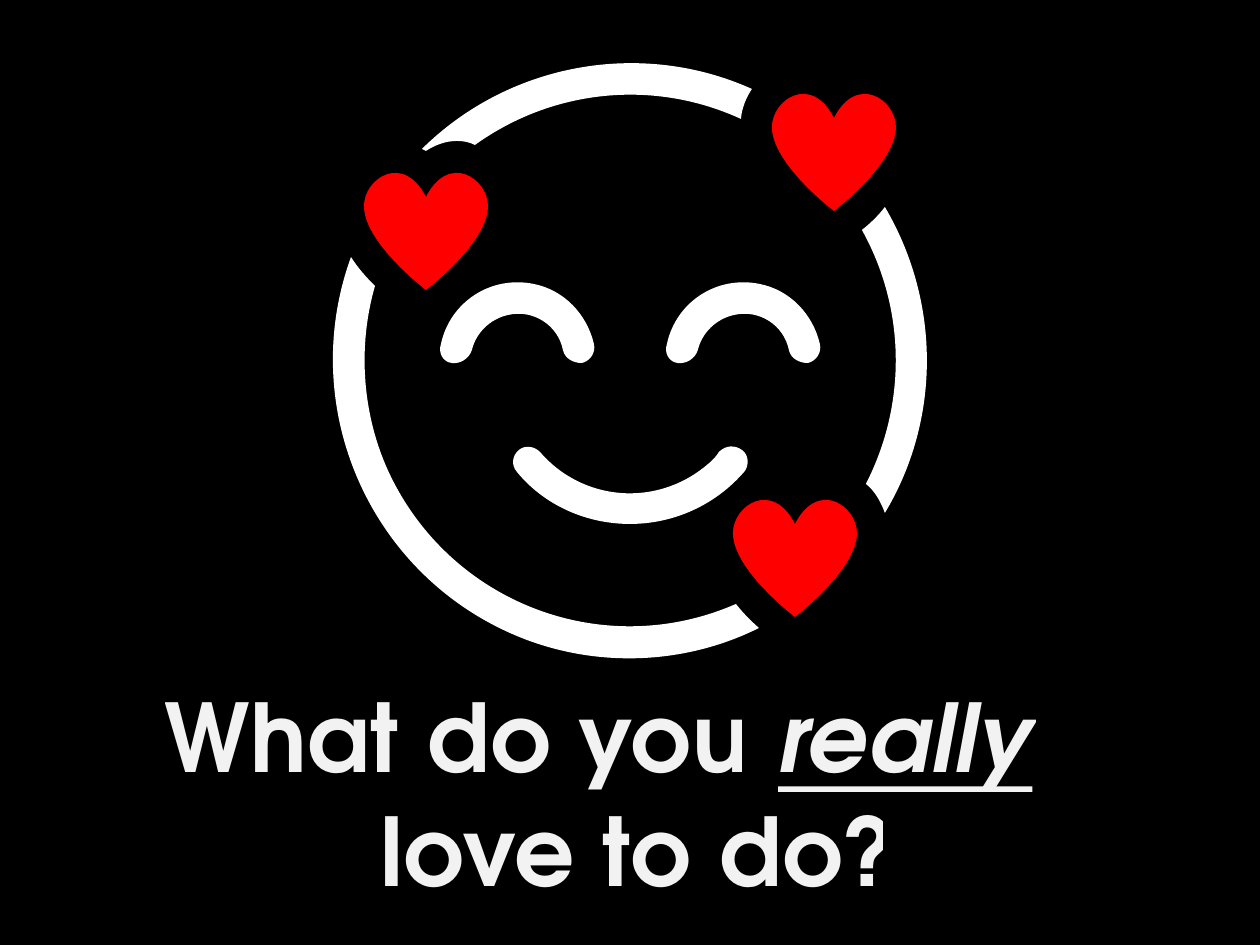
"""Build a slide with a smiling face, three hearts and a question."""
import lxml.etree
import pptx
import pptx.dml.color
import pptx.enum.text
import pptx.oxml.ns
import pptx.util

PX = 914400 // 126
qn = pptx.oxml.ns.qn

HEART = [(0, 0), (-23, -45), (-62, -18), (-62, 9), (-62, 46), (0, 93), (0, 93),
         (0, 93), (62, 46), (62, 9), (62, -18), (23, -45), (0, 0)]
EYE = [(452, 363), (443, 362), (438, 353), (441, 344), (450, 302), (491, 275), (534, 284),
       (564, 290), (587, 314), (594, 344), (596, 353), (590, 361), (582, 363),
       (574, 363), (565, 359), (563, 350), (558, 325), (533, 309), (508, 315),
       (490, 319), (476, 333), (472, 350), (469, 359), (460, 364), (452, 363)]
MOUTH = [(630, 524), (586, 524), (544, 505), (517, 472), (511, 465), (512, 456), (519, 450),
         (525, 445), (534, 446), (540, 452), (582, 501), (656, 508), (707, 465),
         (712, 461), (716, 457), (719, 452), (726, 445), (735, 445), (742, 450),
         (749, 455), (749, 465), (745, 471), (716, 505), (674, 524), (630, 524)]
RING_TOP = [(426, 151), (435, 145), (446, 141), (457, 141), (463, 141), (469, 142), (475, 145),
            (553, 89), (654, 79), (741, 119), (742, 108), (746, 98), (752, 89),
            (641, 39), (509, 63), (422, 149), (423, 150), (425, 150), (426, 151)]
RING_RIGHT = [(862, 230), (906, 309), (907, 404), (866, 484), (875, 491), (881, 502), (885, 513),
              (941, 420), (941, 302), (885, 207), (879, 215), (871, 223), (862, 230)]
RING_LEFT = [(736, 604), (601, 663), (445, 601), (386, 466), (362, 410), (358, 345), (375, 286),
             (366, 277), (358, 268), (351, 257), (295, 411), (373, 582), (527, 640),
             (602, 668), (687, 664), (759, 628), (751, 621), (743, 613), (736, 604)]


def paint(fill, color):
    fill.solid()
    fill.fore_color.rgb = pptx.dml.color.RGBColor.from_string(color)


def draw_curves(shapes, points, color, left=0, top=0):
    bounds = []
    for axis in (0, 1):
        values = [(1 - t) ** 3 * a + 3 * t * (1 - t) ** 2 * b + 3 * t * t * (1 - t) * c + t ** 3 * d
                  for a, b, c, d in (tuple(p[axis] for p in points[first:first + 4])
                                     for first in range(0, len(points) - 1, 3))
                  for t in (step / 20 for step in range(21))]
        bounds.append((round(min(values)), round(max(values))))
    (x_min, x_max), (y_min, y_max) = bounds
    builder = shapes.build_freeform(left + x_min, top + y_min, scale=PX)
    builder.add_line_segments([(left + x_max, top + y_max)], close=False)
    shape = builder.convert_to_shape()
    outline = shape._element.find(".//" + qn("a:path"))
    for child in list(outline):
        outline.remove(child)
    for first in range(-2, len(points), 3):
        tag = "a:moveTo" if first < 0 else "a:cubicBezTo"
        command = lxml.etree.SubElement(outline, qn(tag))
        for x, y in points[max(first, 0):first + 3]:
            lxml.etree.SubElement(command, qn("a:pt"), x=str(x - x_min), y=str(y - y_min))
    lxml.etree.SubElement(outline, qn("a:close"))
    shape.shadow.inherit = False
    paint(shape.fill, color)
    shape.line.fill.background()


presentation = pptx.Presentation()
presentation.slide_width = pptx.util.Inches(10)
presentation.slide_height = pptx.util.Inches(7.5)
slide = presentation.slides.add_slide(presentation.slide_layouts[6])
paint(slide.background.fill, "000000")

face = slide.shapes.add_group_shape()
for left, top in ((426, 197), (834, 118)):
    draw_curves(face.shapes, HEART, "FF0000", left, top)
for ring in (RING_TOP, RING_RIGHT, RING_LEFT):
    draw_curves(face.shapes, ring, "FFFFFF")
draw_curves(face.shapes, HEART, "FF0000", 795, 524)
draw_curves(face.shapes, EYE, "FFFFFF")
draw_curves(face.shapes, MOUTH, "FFFFFF")
draw_curves(face.shapes, EYE, "FFFFFF", 226)

question = slide.shapes.add_textbox(45 * PX, 672 * PX, 1188 * PX, 242 * PX)
frame = question.text_frame
frame.word_wrap = True
frame.auto_size = pptx.enum.text.MSO_AUTO_SIZE.SHAPE_TO_FIT_TEXT
frame.margin_left = 60 * PX
frame.margin_right = 140 * PX
paragraph = frame.paragraphs[0]
paragraph.alignment = pptx.enum.text.PP_ALIGN.CENTER
properties = paragraph._p.get_or_add_pPr()
properties.set("marL", str(80 * PX))
properties.set("indent", str(-80 * PX))
font = paragraph.font
font.name = "TeX Gyre Adventor"
font.size = pptx.util.Pt(54)
font.bold = True
paint(font.fill, "FFFFFF")
white = font._element.find(".//" + qn("a:srgbClr"))
lxml.etree.SubElement(white, qn("a:alpha"), val="95000")
for text, emphasis in (("What do you ", False), ("really", True), (" love to do?", False)):
    run = paragraph.add_run()
    run.text = text
    run._r.get_or_add_rPr().set("spc", "50")
    if emphasis:
        run.font.italic = True
        run.font.underline = True

presentation.save("out.pptx")
